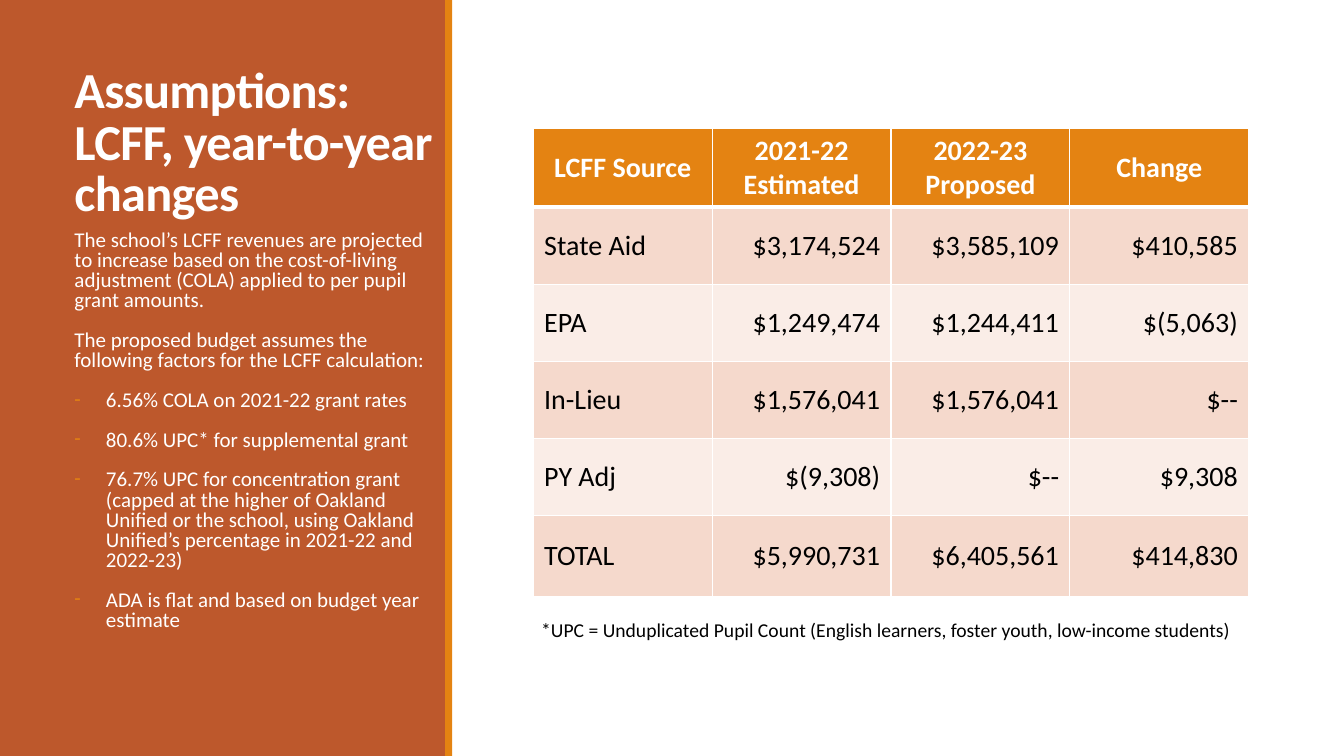
from lxml import etree
from pptx import Presentation
from pptx.dml.color import RGBColor
from pptx.enum.shapes import MSO_SHAPE
from pptx.enum.text import MSO_ANCHOR, MSO_AUTO_SIZE, PP_ALIGN
from pptx.oxml.ns import qn
from pptx.util import Pt

FONT = "Calibri"
WHITE, BLACK = "FFFFFF", "000000"
RUST, ORANGE = "BD582C", "E48312"
BANDS = ("FAEDE7", "F5D9CC")

TITLE = "Assumptions:\vLCFF, year-to-year changes"
INTRO = [
    "The school’s LCFF revenues are projected to increase based on the cost-of-living "
    "adjustment (COLA) applied to per pupil grant amounts.",
    "The proposed budget assumes the following factors for the LCFF calculation:",
]
FACTORS = [
    "6.56% COLA on 2021-22 grant rates",
    "80.6% UPC* for supplemental grant",
    "76.7% UPC for concentration grant (capped at the higher of Oakland Unified or the "
    "school, using Oakland Unified’s percentage in 2021-22 and 2022-23)",
    "ADA is flat and based on budget year estimate",
]
FOOTNOTE = "*UPC = Unduplicated Pupil Count (English learners, foster youth, low-income students)"
REVENUES = [
    ("LCFF Source", "2021-22 Estimated", "2022-23 Proposed", "Change"),
    ("State Aid", "$3,174,524", "$3,585,109", "$410,585"),
    ("EPA", "$1,249,474", "$1,244,411", "$(5,063)"),
    ("In-Lieu", "$1,576,041", "$1,576,041", "$--"),
    ("PY Adj", "$(9,308)", "$--", "$9,308"),
    ("TOTAL", "$5,990,731", "$6,405,561", "$414,830"),
]


def rgb(value):
    """Turn a hex string into a colour."""
    return RGBColor.from_string(value)


def format_runs(p, size, color, bold=False):
    """Apply font, size, colour and weight to every run of a paragraph."""
    for r in p.runs:
        r.font.name = FONT
        r.font.size = Pt(size)
        r.font.bold = bold
        r.font.color.rgb = rgb(color)


def set_indent(p, left, first=0):
    """Set the left margin and first-line indent of a paragraph."""
    pPr = p._p.get_or_add_pPr()
    pPr.set("marL", str(Pt(left)))
    pPr.set("indent", str(Pt(first)))
    return pPr


def add_panel(slide, left, width, color):
    """Add a full-height colour panel."""
    sp = slide.shapes.add_shape(MSO_SHAPE.RECTANGLE, Pt(left), 0, Pt(width), Pt(540))
    sp.shadow.inherit = False
    sp.fill.solid()
    sp.fill.fore_color.rgb = rgb(color)
    sp.line.fill.background()


def place_placeholder(slide, sp, box, anchor):
    """Bring a placeholder to the front, place it and return its text frame."""
    slide.shapes._spTree.append(sp._element)
    sp.left, sp.top, sp.width, sp.height = map(Pt, box)
    tf = sp.text_frame
    tf.word_wrap = True
    tf.auto_size = MSO_AUTO_SIZE.NONE
    tf.vertical_anchor = anchor
    return tf


def fill_title(slide):
    """Write the slide title."""
    tf = place_placeholder(slide, slide.shapes.title, (46, 49.5, 270, 112.5), MSO_ANCHOR.BOTTOM)
    tf.text = TITLE
    p = tf.paragraphs[0]
    p.alignment = PP_ALIGN.LEFT
    p.line_spacing = 0.85
    format_runs(p, 36, WHITE, True)
    for r in p.runs:
        r.font._element.set("spc", "-50")


def set_bullet(p, dashed):
    """Give a paragraph an orange dash, or no bullet."""
    pPr = set_indent(p, 22.5, -22.5) if dashed else set_indent(p, 0)
    if not dashed:
        etree.SubElement(pPr, qn("a:buNone"))
        return
    color = etree.SubElement(pPr, qn("a:buClr"))
    etree.SubElement(color, qn("a:srgbClr"), val=ORANGE)
    etree.SubElement(pPr, qn("a:buFont"), typeface=FONT)
    etree.SubElement(pPr, qn("a:buChar"), char="-")


def fill_body(slide):
    """Write the introduction and the dashed list of factors."""
    tf = place_placeholder(slide, slide.placeholders[1], (46, 161.5, 270, 314.5), MSO_ANCHOR.TOP)
    tf.text = "\n".join(INTRO + FACTORS)
    for i, p in enumerate(tf.paragraphs):
        p.line_spacing = 0.8
        p.space_before, p.space_after = Pt(12), Pt(2)
        set_bullet(p, i >= len(INTRO))
        format_runs(p, 15, WHITE)


def set_borders(cell, top, bottom):
    """Draw white cell borders with the given top and bottom widths."""
    tcPr = cell._tc.get_or_add_tcPr()
    widths = {"a:lnL": 1, "a:lnR": 1, "a:lnT": top, "a:lnB": bottom}
    for i, (tag, width) in enumerate(widths.items()):
        ln = etree.Element(qn(tag), w=str(Pt(width)))
        fill = etree.SubElement(ln, qn("a:solidFill"))
        etree.SubElement(fill, qn("a:srgbClr"), val=WHITE)
        tcPr.insert(i, ln)


def fill_cell(cell, text, row, col):
    """Write and format one table cell."""
    header = row == 0
    cell.text = text
    cell.vertical_anchor = MSO_ANCHOR.MIDDLE
    cell.margin_left = cell.margin_right = Pt(7.7)
    cell.margin_top = cell.margin_bottom = Pt(3.8)
    cell.fill.solid()
    cell.fill.fore_color.rgb = rgb(ORANGE if header else BANDS[row % 2])
    set_borders(cell, 3 if row == 1 else 1, 3 if header else 1)
    p = cell.text_frame.paragraphs[0]
    body_align = PP_ALIGN.RIGHT if col else PP_ALIGN.LEFT
    p.alignment = PP_ALIGN.CENTER if header else body_align
    format_runs(p, 20, WHITE if header else BLACK, header)


def add_revenue_table(slide):
    """Add the table of revenues by source."""
    rows, cols = len(REVENUES), len(REVENUES[0])
    frame = slide.shapes.add_table(rows, cols, Pt(381), Pt(91.5), Pt(511), Pt(333))
    table = frame.table
    for column in table.columns:
        column.width = Pt(127.75)
    for row in table.rows:
        row.height = Pt(55)
    table.rows[rows - 1].height = Pt(58)
    for i, values in enumerate(REVENUES):
        for j, text in enumerate(values):
            fill_cell(table.cell(i, j), text, i, j)


def add_footnote(slide):
    """Add the note below the table."""
    sp = slide.shapes.add_textbox(Pt(343.5), Pt(438), Pt(548.5), Pt(24.5))
    tf = sp.text_frame
    tf.word_wrap = True
    tf.auto_size = MSO_AUTO_SIZE.SHAPE_TO_FIT_TEXT
    tf.text = FOOTNOTE
    set_indent(tf.paragraphs[0], 36)
    format_runs(tf.paragraphs[0], 14, BLACK)


def main():
    """Build and save the slide."""
    prs = Presentation()
    prs.slide_width, prs.slide_height = Pt(960), Pt(540)
    slide = prs.slides.add_slide(prs.slide_layouts[1])
    add_panel(slide, 0, 319, RUST)
    add_panel(slide, 318, 5, ORANGE)
    fill_title(slide)
    add_revenue_table(slide)
    fill_body(slide)
    add_footnote(slide)
    prs.save("out.pptx")


if __name__ == "__main__":
    main()
